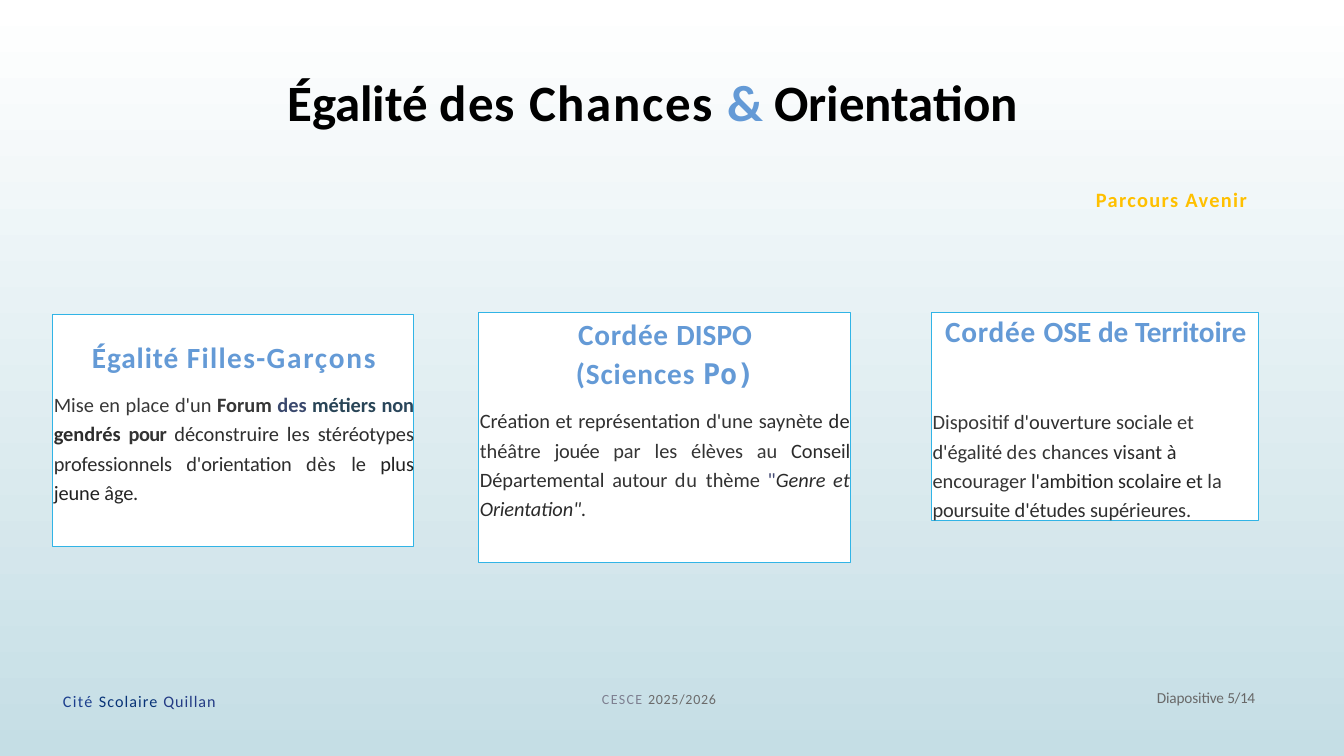
from dataclasses import dataclass
from pptx import Presentation
from pptx.dml.color import RGBColor
from pptx.enum.shapes import MSO_SHAPE
from pptx.enum.text import MSO_ANCHOR, PP_ALIGN
from pptx.util import Inches, Pt


@dataclass(frozen=True)
class Theme:
    font: str = "Calibri"
    mono: str = "DejaVu Sans Mono"
    black: str = "000000"
    accent: str = "649AD6"
    gold: str = "FFC000"
    border: str = "31B4E6"
    white: str = "FFFFFF"
    mist: str = "C5DEE5"
    title: float = 60
    heading: float = 34.5
    heading_mono: float = 33.5
    body: float = 24
    school: float = 19
    year: float = 16.5
    number: float = 18


T = Theme()
WIDTH, HEIGHT = 21.99, 12.37
LEFT, CENTER, JUSTIFY = PP_ALIGN.LEFT, PP_ALIGN.CENTER, PP_ALIGN.JUSTIFY

# Places are left, top, width, height in percent of the slide.
# A run is text, colour, letter spacing in points, then optional font overrides.
BOLD, ITALIC = {"bold": True}, {"italic": True}
MONO = {"name": T.mono, "size": Pt(T.heading_mono)}

LABELS = [
    ((21.28, 9.13, 73.08, 8.33), T.title, True, [
        ("Égalité ", T.black, 0), ("des ", T.black, 1.4), ("Chances ", T.black, 1.9),
        ("& ", T.accent, -0.8), ("Orientation", T.black, -0.1)]),
    ((81.45, 24.58, 12.32, 3.4), T.body, True, [("Parcours Avenir", T.gold, 1.6)]),
    ((4.59, 91.27, 12.78, 2.83), T.school, False, [
        ("Cité ", "1C3F8E", 1.6), ("Scolaire ", "083377", 1.3), ("Quillan", "233B85", 1.1)]),
    ((44.7, 91.19, 10.6, 2.43), T.year, False, [
        ("CESCE ", "7E8091", 1.6), ("2025/2026", "6B6B6B", 0.9)]),
    ((85.99, 90.86, 7.78, 2.59), T.number, False, [
        ("Diapositive ", "696969", -0.2), ("5/14", "676767", -0.5)]),
]

# A card is place, top inset in inches, heading lines, body alignment,
# space before the body in points, body runs.
CARDS = [
    ((3.91, 41.55, 26.88, 30.72), 0.41,
     [[("Égalité ", T.accent, 1.1), ("Filles-", T.accent, 1.6), ("Garçons", T.accent, 2.1)]],
     JUSTIFY, 15.2, [
        ("Mise en place ", "383838", 0), ("d'un ", "363636", 0),
        ("Forum ", "363636", 0, BOLD), ("des ", "3A486D", 0, BOLD),
        ("métiers ", "284456", 0, BOLD), ("non ", "2A465B", -0.2, BOLD),
        ("gendrés ", "2D2D2D", 0, BOLD), ("pour ", "343434", -0.7, BOLD),
        ("déconstruire les ", "2D2D2D", 0), ("stéréotypes professionnels ", "2D2D2D", -0.1),
        ("d'orientation ", "2D2D2D", -0.2), ("dès ", "2F2F2F", 0.6), ("le ", "2A2A2A", -0.1),
        ("plus ", "212121", -0.2), ("jeune ", "212121", -0.1), ("âge.", "262626", -0.2)]),
    ((35.61, 41.39, 27.65, 33.06), 0.06,
     [[("Cordée ", T.accent, 0.9), ("DISPO", T.accent, 0)],
      [("(Sciences ", T.accent, 1.1), ("Po)", T.accent, -0.2, MONO)]],
     JUSTIFY, 15.4, [
        ("Création et représentation ", "2F2F2F", 0), ("d'une ", "333333", 0),
        ("saynète ", "313131", 0), ("de ", "262626", 0.5), ("théâtre ", "343434", 0),
        ("jouée ", "313131", -0.4), ("par ", "363636", 0), ("les ", "343434", 0),
        ("élèves ", "333333", 0), ("au ", "383838", 0), ("Conseil ", "2B2B2B", -0.1),
        ("Départemental ", "2D2D2D", 0), ("autour ", "343434", -0.1), ("du ", "363636", 0.8),
        ("thème ", "313131", 0), ('"', "424972", -0.5), ("Genre ", "2A2A2A", 0, ITALIC),
        ("et ", "2D2D2D", 0.4, ITALIC), ('Orientation".', "2A2A2A", -0.1, ITALIC)]),
    ((69.3, 41.31, 24.37, 27.57), 0.02,
     [[("Cordée ", T.accent, 0.9), ("OSE de ", T.accent, 0), ("Territoire", T.accent, -0.1)]],
     LEFT, 66, [
        ("Dispositif ", "383838", 0), ("d'ouverture ", "2F2F2F", 0), ("sociale ", "343434", 0),
        ("et ", "3A3A3A", 0), ("d'égalité ", "343434", -0.1), ("des ", "383838", 0.6),
        ("chances ", "343434", 0), ("visant ", "2A2A2A", 0), ("à ", "262626", 0),
        ("encourager ", "343434", 0), ("l'ambition ", "262626", -0.1),
        ("scolaire et ", "262626", 0), ("la ", "343434", -0.1), ("poursuite ", "313131", -0.2),
        ("d'études ", "2D2D2D", -0.1), ("supérieures.", "313131", -0.1)]),
]


def rgb(colour):
    return RGBColor.from_string(colour)


def position(place):
    sides = (WIDTH, HEIGHT, WIDTH, HEIGHT)
    return [Inches(share * side / 100) for share, side in zip(place, sides)]


def prepare_frame(sp, inset_top):
    tf = sp.text_frame
    tf.word_wrap = True
    tf.vertical_anchor = MSO_ANCHOR.TOP
    tf.margin_left, tf.margin_top = Inches(0.02), Inches(inset_top)
    tf.margin_right = tf.margin_bottom = 0
    return tf


def write(p, runs, size, bold=False, align=LEFT):
    p.alignment = align
    p.font.name, p.font.size, p.font.bold = T.font, Pt(size), bold
    for text, colour, spacing, *overrides in runs:
        r = p.add_run()
        r.text = text
        r.font.name, r.font.size, r.font.bold = T.font, Pt(size), bold
        r.font.color.rgb = rgb(colour)
        r.font._element.set("spc", str(round(spacing * 100)))
        for style in overrides:
            for key, value in style.items():
                setattr(r.font, key, value)


def add_label(s, place, size, bold, runs):
    tf = prepare_frame(s.shapes.add_textbox(*position(place)), 0.02)
    write(tf.paragraphs[0], runs, size, bold)


def add_card(s, place, inset_top, headings, align, gap, body):
    sp = s.shapes.add_shape(MSO_SHAPE.RECTANGLE, *position(place))
    sp.shadow.inherit = False
    sp.fill.solid()
    sp.fill.fore_color.rgb = rgb(T.white)
    sp.line.color.rgb = rgb(T.border)
    sp.line.width = Pt(1.25)
    tf = prepare_frame(sp, inset_top)
    for i, runs in enumerate(headings):
        p = tf.add_paragraph() if i else tf.paragraphs[0]
        write(p, runs, T.heading, True, CENTER)
        if i:
            p.space_before = Pt(4.2)
    p = tf.add_paragraph()
    write(p, body, T.body, align=align)
    p.line_spacing, p.space_before = 1.2, Pt(gap)


def main():
    prs = Presentation()
    prs.slide_width, prs.slide_height = Inches(WIDTH), Inches(HEIGHT)
    s = prs.slides.add_slide(prs.slide_layouts[6])
    fill = s.background.fill
    fill.gradient()
    fill.gradient_angle = 270
    for stop, colour in zip(fill.gradient_stops, (T.white, T.mist)):
        stop.color.rgb = rgb(colour)
    for label in LABELS:
        add_label(s, *label)
    for card in CARDS:
        add_card(s, *card)
    prs.save("out.pptx")


if __name__ == "__main__":
    main()
